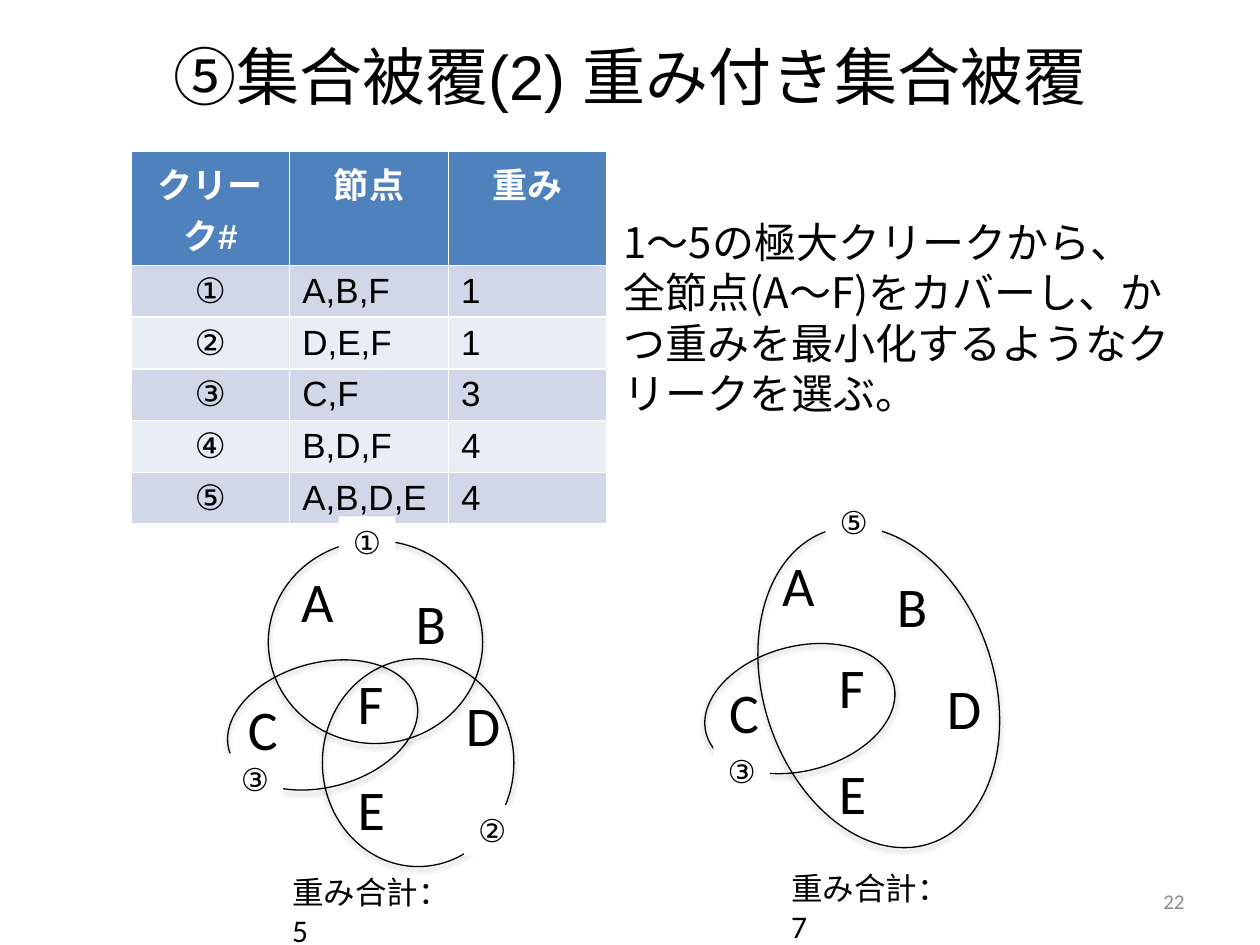
import pptx
import pptx.util
import pptx.dml.color
import pptx.enum.shapes
import pptx.enum.text
import pptx.oxml
import pptx.oxml.ns

Cm = pptx.util.Cm
Pt = pptx.util.Pt
RGB = pptx.dml.color.RGBColor
ALIGN = pptx.enum.text.PP_ALIGN
ANCHOR = pptx.enum.text.MSO_ANCHOR
SHAPE = pptx.enum.shapes.MSO_SHAPE

BLACK = RGB(0x00, 0x00, 0x00)
WHITE = RGB(0xFF, 0xFF, 0xFF)
GREY = RGB(0x8C, 0x8C, 0x8C)
BLUE = RGB(0x4F, 0x81, 0xBD)
BANDS = [RGB(0xE9, 0xED, 0xF4), RGB(0xD0, 0xD8, 0xE8)]

SHADOW = (
    f'<a:effectLst {pptx.oxml.ns.nsdecls("a")}>'
    '<a:outerShdw blurRad="40000" dist="23000" dir="5400000" rotWithShape="0">'
    '<a:srgbClr val="000000"><a:alpha val="35000"/></a:srgbClr>'
    '</a:outerShdw></a:effectLst>'
)


def style(para, size, name, color=BLACK, align=ALIGN.LEFT):
    para.alignment = align
    para.font.size = Pt(size)
    para.font.name = name
    para.font.color.rgb = color


def label(text, box, size, name, color=BLACK, align=ALIGN.LEFT, wrap=True):
    item = slide.shapes.add_textbox(*map(Cm, box))
    frame = item.text_frame
    frame.word_wrap = wrap
    frame.text = text
    for para in frame.paragraphs:
        style(para, size, name, color, align)
    return item


deck = pptx.Presentation()
deck.slide_width = Cm(25.4)
deck.slide_height = Cm(19.05)
slide = deck.slides.add_slide(deck.slide_layouts[5])

title = slide.shapes.title
title.left, title.top, title.width, title.height = map(Cm, (1.27, 0.43, 22.86, 2.16))
title.text_frame.text = "⑤集合被覆(2) 重み付き集合被覆"
title.text_frame.vertical_anchor = ANCHOR.MIDDLE
style(title.text_frame.paragraphs[0], 36, "Arial", align=ALIGN.CENTER)

rows = [
    ("クリーク#", "節点", "重み"),
    ("①", "A,B,F", "1"),
    ("②", "D,E,F", "1"),
    ("③", "C,F", "3"),
    ("④", "B,D,F", "4"),
    ("⑤", "A,B,D,E", "4"),
]
table = slide.shapes.add_table(
    len(rows), 3, Cm(2.64), Cm(3.05), Cm(9.6), Cm(6.24)).table
for r, row in enumerate(rows):
    table.rows[r].height = Cm(1.04)
    for c, text in enumerate(row):
        cell = table.cell(r, c)
        cell.text = text
        cell.fill.solid()
        cell.fill.fore_color.rgb = BANDS[r % 2] if r else BLUE
        para = cell.text_frame.paragraphs[0]
        style(para, 20, "Arial", BLACK if r else WHITE,
              ALIGN.LEFT if r and c else ALIGN.CENTER)
        para.font.bold = r == 0

label("1〜5の極大クリークから、\n"
      "全節点(A〜F)をカバーし、かつ重みを最小化するようなクリークを選ぶ。",
      (12.32, 4.24, 11.76, 4.37), 24, "Noto Sans CJK JP")
page = label("22", (18.21, 17.65, 5.92, 1.02), 12, "Calibri", GREY, ALIGN.RIGHT)
page.text_frame.vertical_anchor = ANCHOR.MIDDLE

rings = [
    (4.55, 13.36, 3.91, 2.51, 345.2),
    (14.4, 11.53, 6.63, 4.65, 72),
    (5.41, 10.9, 4.32, 4.09, 0),
    (6.5, 13.28, 3.86, 4.19, 0),
    (14.17, 13.03, 3.91, 2.51, 345.2),
]
for *box, turn in rings:
    ring = slide.shapes.add_shape(SHAPE.OVAL, *map(Cm, box))
    ring.rotation = turn
    ring.fill.background()
    ring.line.color.rgb = BLACK
    ring.line.width = Pt(0.75)
    ring._element.spPr.append(pptx.oxml.parse_xml(SHADOW))

nodes = [
    ("A", 5.82, 11.3, 1.17),
    ("B", 8.13, 11.73, 1.17),
    ("F", 6.96, 13.36, 1.04),
    ("D", 9.14, 13.79, 1.22),
    ("E", 6.96, 15.49, 1.07),
    ("C", 4.75, 13.87, 1.12),
]
for dx, dy in [(0, 0), (9.7, -0.33)]:
    for text, x, y, wide in nodes:
        label(text, (x + dx, y + dy, wide, 1.63), 32, "Calibri", wrap=False)

marks = [
    ("①", 6.83, 10.41),
    ("②", 9.35, 16.23),
    ("③", 4.57, 15.19),
    ("③", 14.38, 15.04),
    ("⑤", 16.64, 10.01),
]
for text, x, y in marks:
    mark = label(text, (x, y, 1.14, 1.02), 18, "Arial", align=ALIGN.CENTER, wrap=False)
    mark.fill.solid()
    mark.fill.fore_color.rgb = WHITE

for text, x, y in [("重み合計：5", 5.64, 17.48), ("重み合計：7", 15.7, 17.4)]:
    label(text, (x, y, 3.73, 1.02), 18, "Calibri")

deck.save("out.pptx")
